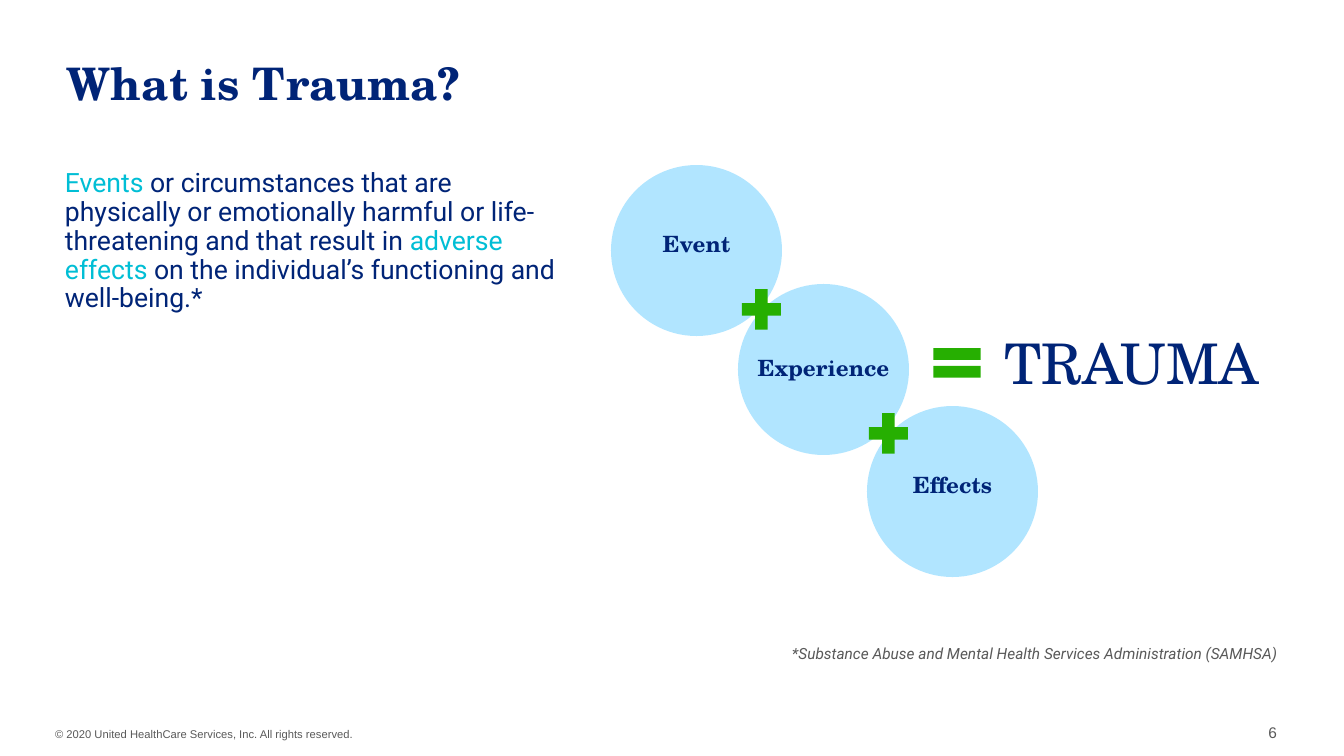
"""Builds the slide that defines trauma as event, experience and effects."""
from lxml import etree
from pptx import Presentation
from pptx.dml.color import RGBColor
from pptx.enum.shapes import MSO_SHAPE
from pptx.enum.text import MSO_ANCHOR, PP_ALIGN
from pptx.oxml.ns import qn
from pptx.util import Emu, Pt

LEFT, CENTER, RIGHT = PP_ALIGN.LEFT, PP_ALIGN.CENTER, PP_ALIGN.RIGHT
TOP, MIDDLE, BOTTOM = MSO_ANCHOR.TOP, MSO_ANCHOR.MIDDLE, MSO_ANCHOR.BOTTOM
OVAL, PLUS, EQUAL = MSO_SHAPE.OVAL, MSO_SHAPE.MATH_PLUS, MSO_SHAPE.MATH_EQUAL

COLORS = {
    "navy": "002477",
    "teal": "00BED5",
    "gray": "595959",
    "sky": "96DDFF",
    "green": "26AF01",
}
SERIF, SANS, PLAIN = "TeX Gyre Schola", "Roboto", "Arial"
CIRCLE = 171


def px(length):
    """Turn px into EMU."""
    return Emu(round(length * 914400 / 100.8))


def add_span(para, text, font=SERIF, size=16, color="navy", bold=False,
             italic=False, outline=0):
    """Add formatted text to a paragraph."""
    span = para.add_run()
    span.text = text
    span.font.name = font
    span.font.size = Pt(size)
    span.font.bold = bold
    span.font.italic = italic
    span.font.color.rgb = RGBColor.from_string(COLORS[color])
    if outline:
        line = etree.Element(qn("a:ln"), w=str(Pt(outline)))
        fill = etree.SubElement(line, qn("a:solidFill"))
        etree.SubElement(fill, qn("a:srgbClr"), val=COLORS[color])
        span._r.get_or_add_rPr().insert(0, line)


class TraumaPage:
    """Holds the page and draws its elements in one style."""

    def __init__(self, page):
        """Keep the page to draw on."""
        self.page = page

    def text(self, spans, left, top, width, height, align=LEFT, anchor=TOP,
             spacing=1.0, after=0, inset=10, **style):
        """Add a one-paragraph text box from (text, color) pairs."""
        box = self.page.shapes.add_textbox(*map(px, (left, top, width, height)))
        frame = box.text_frame
        frame.word_wrap = True
        frame.vertical_anchor = anchor
        frame.margin_left = px(inset)
        para = frame.paragraphs[0]
        para.alignment = align
        para.line_spacing = spacing
        para.space_after = Pt(after)
        for text, color in spans:
            add_span(para, text, color=color, **style)

    def shape(self, kind, left, top, width, height, color, opacity=100):
        """Add a filled shape without a line."""
        shape = self.page.shapes.add_shape(
            kind, *map(px, (left, top, width, height)))
        shape.shadow.inherit = False
        shape.line.fill.background()
        shape.fill.solid()
        shape.fill.fore_color.rgb = RGBColor.from_string(COLORS[color])
        if opacity < 100:
            tint = shape._element.spPr.find(".//" + qn("a:srgbClr"))
            etree.SubElement(tint, qn("a:alpha"), val=str(opacity * 1000))

    def circle(self, label, left, top, label_drop):
        """Add a labelled circle."""
        self.shape(OVAL, left, top, CIRCLE, CIRCLE, "sky", opacity=74)
        self.text([(label, "navy")], left, top + label_drop, CIRCLE, 37,
                  align=CENTER, after=4, bold=True)


def main():
    """Build and save the deck."""
    deck = Presentation()
    deck.slide_width, deck.slide_height = px(1344), px(756)
    page = TraumaPage(deck.slides.add_slide(deck.slide_layouts[6]))

    page.text([("© 2020 United HealthCare Services, Inc. All rights reserved.", "gray")],
              55, 722, 348, 24, inset=0, font=PLAIN, size=8)
    page.text([("What is Trauma?", "navy")], 57, 51, 1233, 81, size=32, bold=True)
    page.text([("6", "gray")], 1236, 712, 51, 41, align=RIGHT, anchor=MIDDLE,
              font=PLAIN, size=11)
    page.text([
        ("Events ", "teal"),
        ("or circumstances that are physically or emotionally harmful or "
         "life-threatening and that result in ", "navy"),
        ("adverse effects ", "teal"),
        ("on the individual’s functioning and well-being.*", "navy"),
    ], 55, 165, 527, 499, spacing=0.9, after=8, font=SANS, size=19)
    page.text([("*Substance Abuse and Mental Health Services Administration (SAMHSA)",
                "gray")], 56, 628, 1232, 40, align=RIGHT, anchor=BOTTOM,
              spacing=0.9, after=8, font=SANS, size=11, italic=True)

    for label, left, top, label_drop in (
            ("Event", 611, 165, 60),
            ("Experience", 738, 284, 65),
            ("Effects", 867, 406, 60)):
        page.circle(label, left, top, label_drop)
    for left, top in ((735, 282), (862, 406)):
        page.shape(PLUS, left, top, 53, 55, "green")

    page.text([("TRAUMA", "navy")], 965, 324, 334, 78, align=CENTER, size=40,
              outline=1.45)
    page.shape(EQUAL, 925, 338, 64, 50, "green")
    deck.save("out.pptx")


if __name__ == "__main__":
    main()
